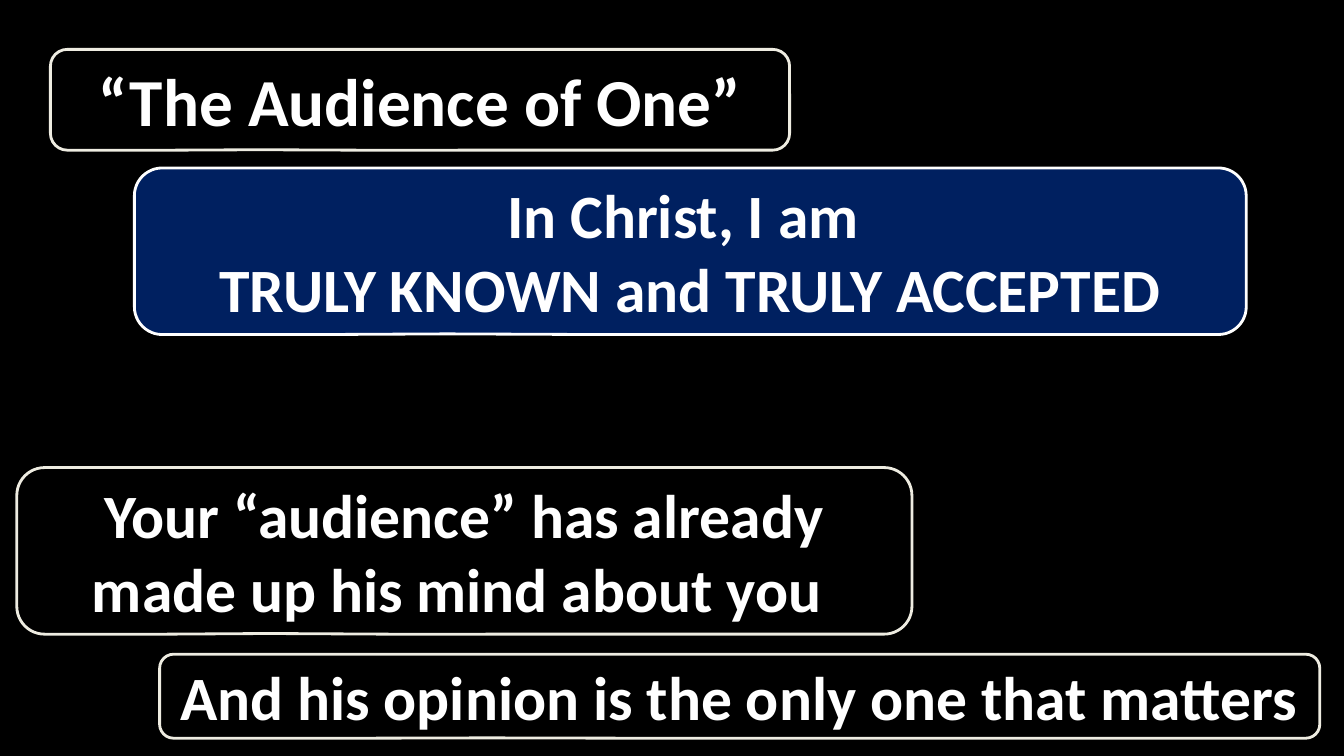
import pptx
import pptx.dml.color
import pptx.enum.shapes
import pptx.enum.text
import pptx.util

Pt = pptx.util.Pt

COLORS = {"black": "000000", "navy": "002060", "cream": "EEECE1", "white": "FFFFFF"}
FONT = "Calibri"
CALLOUT_ADJUSTMENTS = (-0.219, 0.496, 0.167)

# paragraphs, (left, top, width, height) in points, text size, fill, line
CALLOUTS = [
    (["“The Audience of One”"],
     (36, 35.3, 528, 72), 48, "black", "cream"),
    (["Your “audience” has already made up his mind about you "],
     (12, 334, 639.4, 119), 44, "black", "cream"),
    (["And his opinion is the only one that matters"],
     (114, 467.3, 828.7, 60), 44, "black", "cream"),
    (["In Christ, I am ", "TRULY KNOWN and TRULY ACCEPTED"],
     (96, 120, 794.2, 119), 44, "navy", "white"),
]


def rgb(name):
    return pptx.dml.color.RGBColor.from_string(COLORS[name])


def add_callout(slide, paragraphs, box, size, fill, line):
    sp = slide.shapes.add_shape(
        pptx.enum.shapes.MSO_SHAPE.ROUNDED_RECTANGULAR_CALLOUT,
        *(Pt(v) for v in box))
    for i, value in enumerate(CALLOUT_ADJUSTMENTS):
        sp.adjustments[i] = value
    sp.shadow.inherit = False
    sp.fill.solid()
    sp.fill.fore_color.rgb = rgb(fill)
    sp.line.color.rgb = rgb(line)
    sp.line.width = Pt(2)

    tf = sp.text_frame
    tf.word_wrap = True
    tf.vertical_anchor = pptx.enum.text.MSO_ANCHOR.MIDDLE
    for i, text in enumerate(paragraphs):
        p = tf.add_paragraph() if i else tf.paragraphs[0]
        p.alignment = pptx.enum.text.PP_ALIGN.CENTER
        r = p.add_run()
        r.text = text
        r.font.name = FONT
        r.font.size = Pt(size)
        r.font.bold = True
        r.font.color.rgb = rgb("white")


def main():
    prs = pptx.Presentation()
    prs.slide_width, prs.slide_height = Pt(960), Pt(540)
    slide = prs.slides.add_slide(prs.slide_layouts[6])
    slide.background.fill.solid()
    slide.background.fill.fore_color.rgb = rgb("black")
    for callout in CALLOUTS:
        add_callout(slide, *callout)
    prs.save("out.pptx")


if __name__ == "__main__":
    main()
